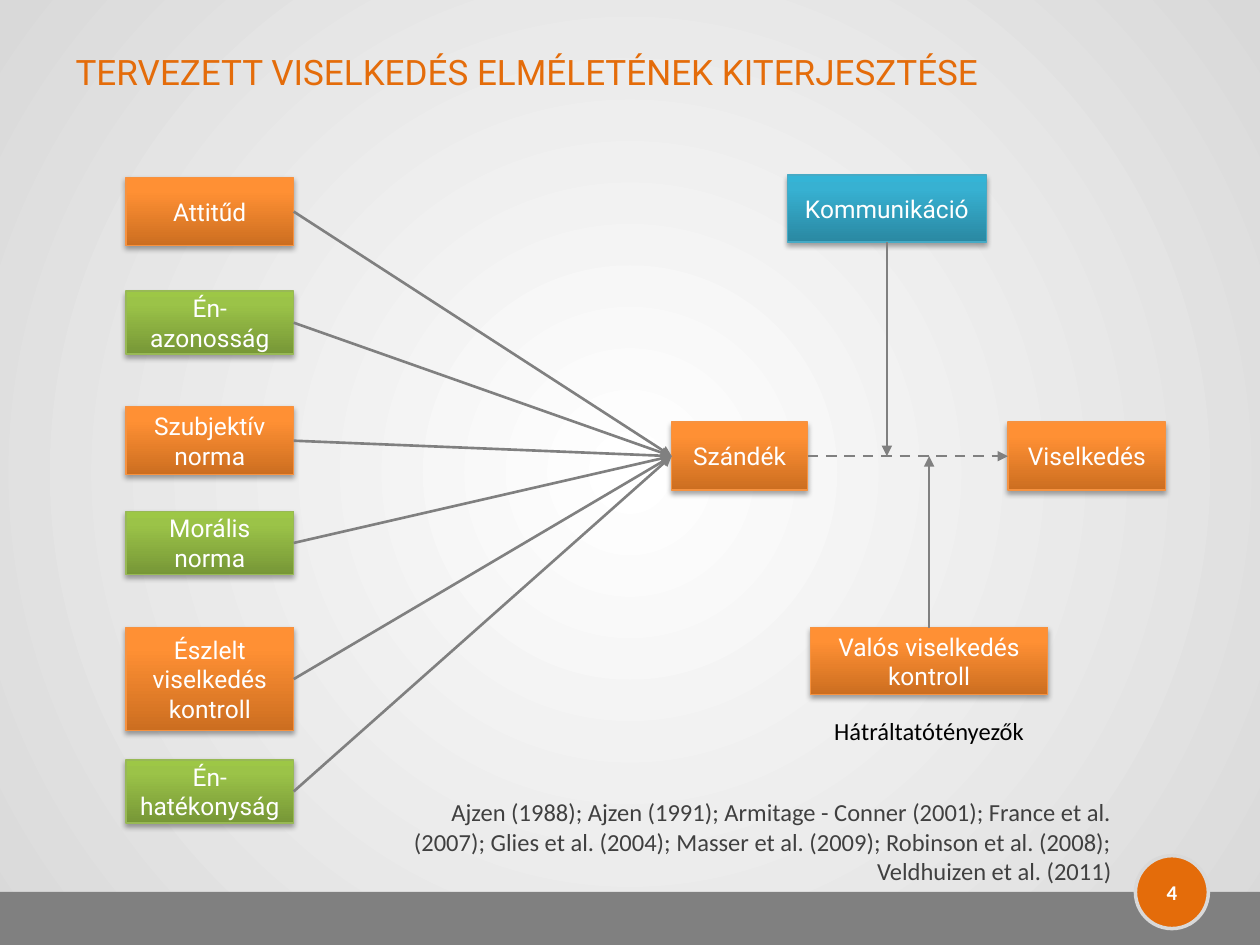
from lxml import etree
from pptx import Presentation
from pptx.dml.color import RGBColor
from pptx.enum.dml import MSO_LINE
from pptx.enum.shapes import MSO_CONNECTOR, MSO_SHAPE
from pptx.enum.text import MSO_ANCHOR, MSO_AUTO_SIZE, PP_ALIGN
from pptx.oxml import parse_xml
from pptx.oxml.ns import qn
from pptx.util import Cm, Pt

RECT, OVAL = MSO_SHAPE.RECTANGLE, MSO_SHAPE.OVAL
LEFT, CENTER, RIGHT = PP_ALIGN.LEFT, PP_ALIGN.CENTER, PP_ALIGN.RIGHT
MIDDLE, TOP = MSO_ANCHOR.MIDDLE, MSO_ANCHOR.TOP
STRAIGHT, DASH = MSO_CONNECTOR.STRAIGHT, MSO_LINE.DASH
GROW, NO_FIT = MSO_AUTO_SIZE.SHAPE_TO_FIT_TEXT, MSO_AUTO_SIZE.NONE
SIDE_TOP, SIDE_LEFT, SIDE_BOTTOM, SIDE_RIGHT = range(4)
NS = 'xmlns:a="http://schemas.openxmlformats.org/drawingml/2006/main"'

ORANGE, GRAY, WHITE, SILVER = "E46C0A", "808080", "FFFFFF", "D9D9D9"
TITLE = "TERVEZETT VISELKEDÉS ELMÉLETÉNEK KITERJESZTÉSE"
BARRIERS = "Hátráltatótényezők"
SOURCES = ("Ajzen (1988); Ajzen (1991); Armitage - Conner (2001); France et al. (2007); "
           "Glies et al. (2004); Masser et al. (2009); Robinson et al. (2008); "
           "Veldhuizen et al. (2011)")
PALETTES = {
    "orange": ("F69240", [(0, "CC6E20"), (80, "FF9034"), (100, "FF9136")]),
    "green": ("98B955", [(0, "779737"), (80, "9BC348"), (100, "9DC746")]),
    "blue": ("46AAC5", [(0, "2A88A2"), (80, "37B1D2"), (100, "34B4D6")]),
}
FACTOR_LEFT, FACTOR_WIDTH = 2.54, 3.38
FACTORS = [
    ("Attitűd", 3.58, 1.37, "orange"),
    ("Én-azonosság", 5.87, 1.27, "green"),
    ("Szubjektív norma", 8.2, 1.37, "orange"),
    ("Morális norma", 10.31, 1.27, "green"),
    ("Észlelt viselkedés kontroll", 12.65, 2.08, "orange"),
    ("Én-hatékonyság", 15.32, 1.27, "green"),
]
INTENTION = ("Szándék", 13.54, 8.51, 2.74, 1.37, "orange")
BEHAVIOUR = ("Viselkedés", 20.32, 8.51, 3.18, 1.37, "orange")
COMMUNICATION = ("Kommunikáció", 15.87, 3.53, 4.02, 1.35, "blue")
CONTROL = ("Valós viselkedés kontroll", 16.34, 12.65, 4.78, 1.35, "orange")


def rgb(value):
    return RGBColor.from_string(value)


def set_gradient(fill, root, stops, direction):
    fill.gradient()
    gs = "".join(f'<a:gs pos="{pos * 1000}"><a:srgbClr val="{color}"/></a:gs>'
                 for pos, color in stops)
    old = next(root.iter(qn("a:gradFill")))
    old.getparent().replace(old, parse_xml(
        f'<a:gradFill {NS} rotWithShape="1"><a:gsLst>{gs}</a:gsLst>{direction}</a:gradFill>'))


def write(shape, text, size, font, color, align, anchor=MIDDLE, bold=False, fit=NO_FIT):
    tf = shape.text_frame
    tf.text = text
    tf.word_wrap = True
    tf.auto_size = fit
    tf.vertical_anchor = anchor
    p = tf.paragraphs[0]
    p.alignment = align
    r = p.runs[0]
    r.font.size, r.font.name, r.font.bold = Pt(size), font, bold
    r.font.color.rgb = rgb(color)


def add_text(s, box, *args, **kwargs):
    write(s.shapes.add_textbox(*map(Cm, box)), *args, **kwargs)


def add_plain(s, kind, box, color):
    sp = s.shapes.add_shape(kind, *map(Cm, box))
    sp.shadow.inherit = False
    sp.fill.solid()
    sp.fill.fore_color.rgb = rgb(color)
    sp.line.fill.background()
    return sp


def add_box(s, text, left, top, width, height, palette):
    border, stops = PALETTES[palette]
    sp = s.shapes.add_shape(RECT, *map(Cm, (left, top, width, height)))
    sp.shadow.inherit = False
    spPr = sp.element.spPr
    set_gradient(sp.fill, spPr, stops, '<a:lin ang="16200000" scaled="0"/>')
    sp.line.color.rgb = rgb(border)
    sp.line.width = Pt(0.75)
    spPr.find(qn("a:effectLst")).append(parse_xml(
        f'<a:outerShdw {NS} blurRad="{Pt(3.1)}" dist="{Pt(1.8)}" dir="5400000" rotWithShape="0">'
        '<a:srgbClr val="000000"><a:alpha val="35000"/></a:srgbClr></a:outerShdw>'))
    write(sp, text, 14, "Roboto", WHITE, CENTER)
    return sp


def add_arrow(s, start, side, end, end_side=None):
    c = s.shapes.add_connector(STRAIGHT, 0, 0, 0, 0)
    c.begin_connect(start, side)
    if end_side is None:
        c.end_x, c.end_y = end
    else:
        c.end_connect(end, end_side)
    c.line.color.rgb = rgb(GRAY)
    c.line.width = Pt(1.5)
    spPr = c.element.spPr
    etree.SubElement(spPr.find(qn("a:ln")), qn("a:tailEnd"), type="triangle")
    etree.SubElement(spPr, qn("a:effectLst"))
    return c


def main():
    prs = Presentation()
    prs.slide_width, prs.slide_height = Cm(25.4), Cm(19.05)
    s = prs.slides.add_slide(prs.slide_layouts[5])
    set_gradient(s.background.fill, s.element, [(0, WHITE), (100, SILVER)],
                 '<a:path path="circle"><a:fillToRect l="50000" t="50000" r="50000" b="50000"/></a:path>')

    title = s.shapes.title
    title.left, title.top, title.width, title.height = map(Cm, (1.27, 0.76, 22.86, 1.35))
    write(title, TITLE, 20, "Roboto", ORANGE, LEFT)

    add_plain(s, RECT, (0, 17.98, 25.4, 1.07), GRAY)
    badge = add_plain(s, OVAL, (22.89, 17.25, 1.47, 1.47), ORANGE)
    badge.line.color.rgb = rgb(SILVER)
    badge.line.width = Pt(2)
    add_text(s, (22.89, 17.48, 1.47, 1.01), "4", 12, "Calibri", WHITE, CENTER, bold=True)

    intention, behaviour, communication, control = (
        add_box(s, *box) for box in (INTENTION, BEHAVIOUR, COMMUNICATION, CONTROL))
    factors = [add_box(s, text, FACTOR_LEFT, top, FACTOR_WIDTH, height, palette)
               for text, top, height, palette in FACTORS]

    for factor in factors:
        add_arrow(s, factor, SIDE_RIGHT, intention, SIDE_LEFT)
    add_arrow(s, intention, SIDE_RIGHT, behaviour, SIDE_LEFT).line.dash_style = DASH
    axis = intention.top + intention.height // 2
    for box, side in ((communication, SIDE_BOTTOM), (control, SIDE_TOP)):
        add_arrow(s, box, side, (box.left + box.width // 2, axis))

    add_text(s, (16.34, 14.3, 4.78, 0.86), BARRIERS, 14, "Calibri", "000000", CENTER, TOP, fit=GROW)
    add_text(s, (7.62, 15.95, 15.04, 2.06), SOURCES, 14, "Calibri", "404040", RIGHT, TOP, fit=GROW)
    prs.save("out.pptx")


if __name__ == "__main__":
    main()
